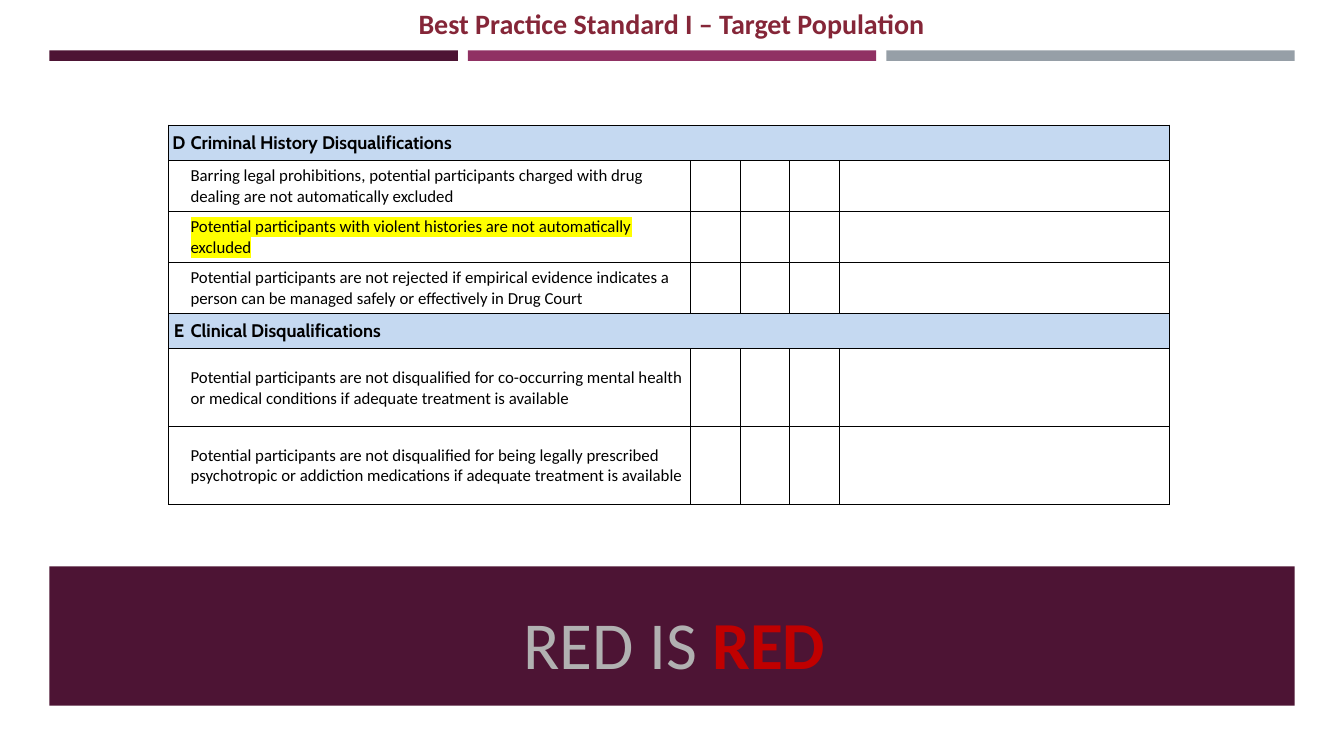
from lxml import etree
from pptx import Presentation
from pptx.dml.color import RGBColor
from pptx.enum.shapes import MSO_SHAPE
from pptx.enum.text import MSO_ANCHOR, PP_ALIGN
from pptx.oxml.ns import qn
from pptx.util import Inches, Pt

RECTANGLE = MSO_SHAPE.RECTANGLE
MIDDLE, TOP = MSO_ANCHOR.MIDDLE, MSO_ANCHOR.TOP
LEFT, CENTER = PP_ALIGN.LEFT, PP_ALIGN.CENTER

COLORS = {
    "plum": "4D1434", "magenta": "903163", "slate": "969FA7",
    "silver": "B1B1B1", "red": "C00000", "wine": "852638",
    "section": "C5D9F1", "marker": "FFFF00", "black": "000000",
}

# A letter opens a section; rows without one are its criteria.
# (letter, wording, row height in % of the slide, highlight)
CRITERIA = [
    ("D", "Criminal History Disqualifications", 4.7, None),
    ("", "Barring legal prohibitions, potential participants charged with drug "
         "dealing are not automatically excluded", 6.73, None),
    ("", "Potential participants with violent histories are not automatically "
         "excluded", 6.73, "marker"),
    ("", "Potential participants are not rejected if empirical evidence indicates a "
         "person can be managed safely or effectively in Drug Court", 6.73, None),
    ("E", "Clinical Disqualifications", 4.7, None),
    ("", "Potential participants are not disqualified for co-occurring mental health "
         "or medical conditions if adequate treatment is available", 10.3, None),
    ("", "Potential participants are not disqualified for being legally prescribed "
         "psychotropic or addiction medications if adequate treatment is available",
     10.3, None),
]
COLUMN_SHARES = [1.58, 37.28, 3.68, 3.68, 3.68, 24.61]


def rgb(name):
    return RGBColor.from_string(COLORS[name])


def write(paragraph, text, size=12, font="Calibri", color="black", bold=False,
          align=LEFT, highlight=None):
    paragraph.alignment = align
    run = paragraph.add_run()
    run.text = text
    run.font.size, run.font.name, run.font.bold = Pt(size), font, bold
    run.font.color.rgb = rgb(color)
    if highlight:
        marker = etree.Element(qn("a:highlight"))
        etree.SubElement(marker, qn("a:srgbClr"), val=COLORS[highlight])
        run.font._element.find(qn("a:latin")).addprevious(marker)


def set_borders(cell, hidden=()):
    """Rule all four sides of a cell, except those hidden."""
    properties = cell._tc.get_or_add_tcPr()
    for side in ("lnL", "lnR", "lnT", "lnB"):
        line = etree.SubElement(properties, qn(f"a:{side}"), w=str(Pt(0.5)))
        if side in hidden:
            etree.SubElement(line, qn("a:noFill"))
        else:
            fill = etree.SubElement(line, qn("a:solidFill"))
            etree.SubElement(fill, qn("a:srgbClr"), val=COLORS["black"])


class SlideBuilder:
    """Places elements by percentages of the slide's width and height."""

    def __init__(self, presentation):
        self.width = presentation.slide_width
        self.height = presentation.slide_height
        self.shapes = presentation.slides.add_slide(
            presentation.slide_layouts[6]).shapes

    def across(self, share):
        return round(self.width * share / 100)

    def down(self, share):
        return round(self.height * share / 100)

    def area(self, left, top, width, height):
        return (self.across(left), self.down(top),
                self.across(width), self.down(height))

    def block(self, *area, color):
        block = self.shapes.add_shape(RECTANGLE, *self.area(*area))
        block.shadow.inherit = False
        block.fill.solid()
        block.fill.fore_color.rgb = rgb(color)
        block.line.fill.background()

    def text(self, *area, anchor=TOP):
        """Add an empty text box and return its paragraph."""
        frame = self.shapes.add_textbox(*self.area(*area)).text_frame
        frame.word_wrap = True
        frame.vertical_anchor = anchor
        return frame.paragraphs[0]

    def checklist(self, left, top, criteria, columns):
        height = sum(row[2] for row in criteria)
        table = self.shapes.add_table(
            len(criteria), len(columns),
            *self.area(left, top, sum(columns), height)).table
        table.first_row = table.horz_banding = False
        for column, share in zip(table.columns, columns):
            column.width = self.across(share)
        for row, (letter, wording, share, highlight) in zip(table.rows, criteria):
            row.height = self.down(share)
            cells = list(row.cells)
            for index, cell in enumerate(cells):
                cell.vertical_anchor = MIDDLE
                cell.margin_left = cell.margin_right = cell.margin_top = Inches(0.01)
                cell.margin_bottom = 0
                set_borders(cell, {0: ["lnR"], 1: ["lnL"]}.get(index, ()))
                if letter:
                    cell.fill.solid()
                    cell.fill.fore_color.rgb = rgb("section")
                else:
                    cell.fill.background()
            style = {"highlight": highlight}
            if letter:
                cells[1].merge(cells[-1])
                style = {"size": 13, "font": "Cabin", "bold": True}
                write(cells[0].text_frame.paragraphs[0], letter, align=CENTER, **style)
            write(cells[1].text_frame.paragraphs[0], wording, **style)


def main():
    presentation = Presentation()
    presentation.slide_width, presentation.slide_height = Inches(13.33), Inches(7.5)
    slide = SlideBuilder(presentation)

    margin, content, gap = 3.68, 92.65, 0.75
    stripe = (content - 2 * gap) / 3
    for index, color in enumerate(("plum", "magenta", "slate")):
        slide.block(margin + index * (stripe + gap), 6.67, stripe, 1.4, color=color)
    slide.block(margin, 74.93, content, 18.4, color="plum")

    motto = slide.text(4.95, 74.1, 90.47, 21.87, anchor=MIDDLE)
    write(motto, "RED IS ", size=48, color="silver", align=CENTER)
    write(motto, "RED", size=48, color="red", bold=True, align=CENTER)

    heading = slide.text(3.83, 0.27, 92.27, 5.87)
    write(heading, "Best Practice Standard I – Target Population", size=20,
          color="wine", bold=True, align=CENTER)

    slide.checklist(12.53, 16.53, CRITERIA, COLUMN_SHARES)
    presentation.save("out.pptx")


if __name__ == "__main__":
    main()
